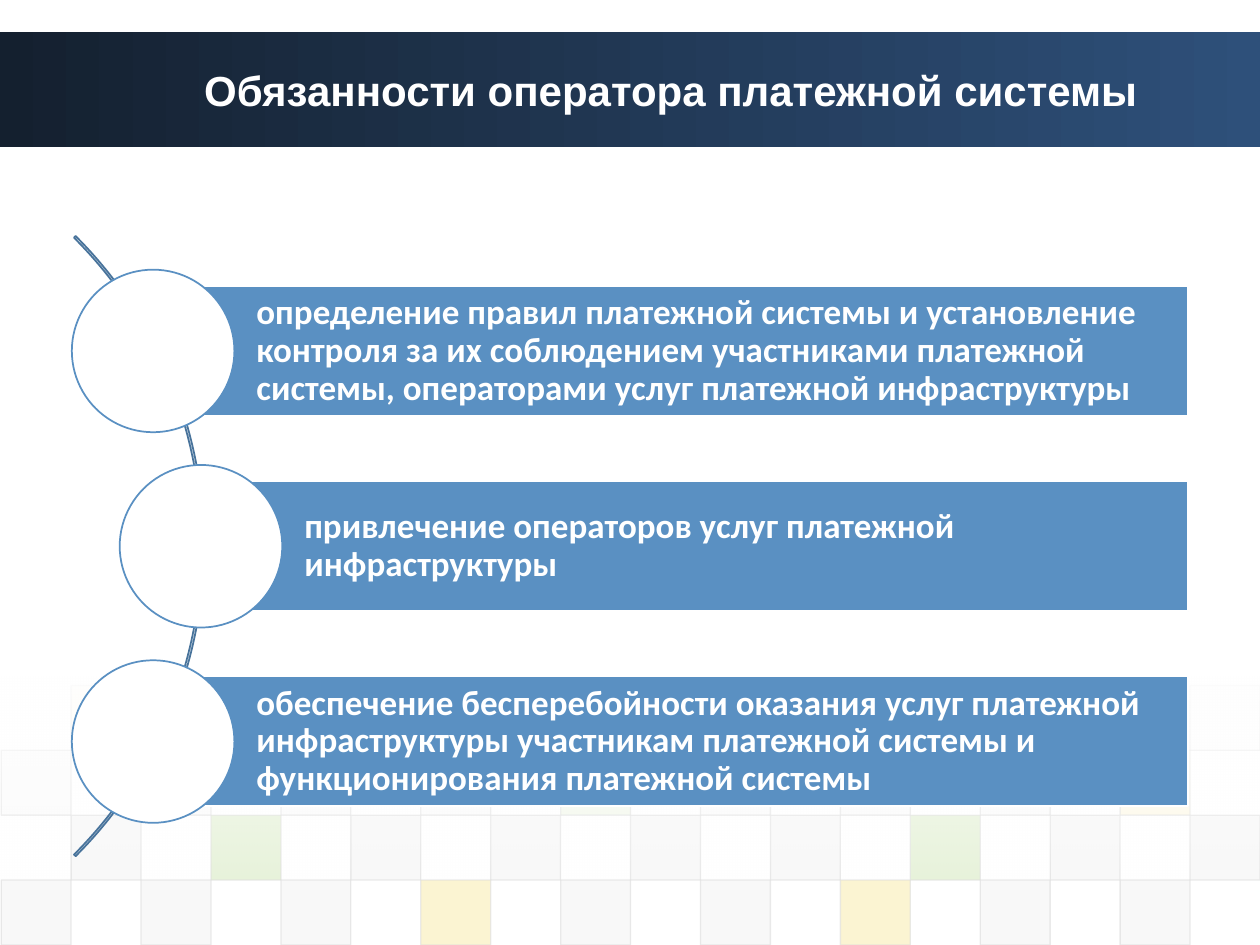
import pptx
import pptx.util
import pptx.dml.color
import pptx.enum.shapes
import pptx.enum.text
import pptx.oxml.ns
from lxml import etree

Inches = pptx.util.Inches
Pt = pptx.util.Pt
Shape = pptx.enum.shapes.MSO_SHAPE
Align = pptx.enum.text.PP_ALIGN
Anchor = pptx.enum.text.MSO_ANCHOR
qn = pptx.oxml.ns.qn

WHITE, GRAY, GREEN, YELLOW = "FFFFFF", "DDDDDD", "8AC246", "EFC821"
BLUE, ARC_BLUE = "5A90C2", "48739B"

DUTIES = [
    "определение правил платежной системы и установление контроля за их "
    "соблюдением участниками платежной системы, операторами услуг "
    "платежной инфраструктуры",
    "привлечение операторов услуг платежной инфраструктуры",
    "обеспечение бесперебойности оказания услуг платежной инфраструктуры "
    "участникам платежной системы и функционирования платежной системы",
]

# Mosaic rows: opacity, columns, and the columns that are not gray
TILE_ROWS = [
    (5, (1, 17), {1: YELLOW, 17: "EAEAEA"}),
    (10, range(0, 17, 2), {8: GREEN, 16: YELLOW}),
    (20, range(1, 18, 2), {3: GREEN, 13: GREEN}),
    (20, range(0, 17, 2), {6: YELLOW, 12: YELLOW}),
]


def set_color(color, value, opacity=100):
    color.rgb = pptx.dml.color.RGBColor.from_string(value)


def set_opacity(element, percents):
    """Give the colours inside an element their opacities, in order."""
    for color, percent in zip(element.iter(qn("a:srgbClr")), percents):
        etree.SubElement(color, qn("a:alpha"), val=str(percent * 1000))


def add_shape(page, kind, left, top, width, height, fill=None, line=None, weight=1):
    shape = page.shapes.add_shape(
        kind, Inches(left), Inches(top), Inches(width), Inches(height))
    shape.shadow.inherit = False
    if fill:
        shape.fill.solid()
        set_color(shape.fill.fore_color, fill)
    else:
        shape.fill.background()
    if line:
        set_color(shape.line.color, line)
        shape.line.width = Pt(weight)
    else:
        shape.line.fill.background()
    return shape


def set_gradient(shape, colors, angle):
    shape.fill.gradient()
    shape.fill.gradient_angle = angle
    for position, (stop, color) in enumerate(zip(shape.fill.gradient_stops, colors)):
        stop.position = position
        set_color(stop.color, color)


def write_text(frame, text, size, font, align, insets, spacing=1.0):
    frame.word_wrap = True
    frame.auto_size = pptx.enum.text.MSO_AUTO_SIZE.NONE
    frame.vertical_anchor = Anchor.MIDDLE
    (frame.margin_left, frame.margin_top,
     frame.margin_right, frame.margin_bottom) = map(Inches, insets)
    para = frame.paragraphs[0]
    para.alignment = align
    para.line_spacing = spacing
    span = para.add_run()
    span.text = text
    span.font.size = Pt(size)
    span.font.name = font
    span.font.bold = True
    set_color(span.font.color, WHITE)


def add_mosaic(page, left, top, width, height):
    pitch, row_height = 0.555, height / len(TILE_ROWS)
    for row, (opacity, columns, accents) in enumerate(TILE_ROWS):
        for column in columns:
            tile = add_shape(
                page, Shape.RECTANGLE, left + column * pitch, top + row * row_height,
                pitch, row_height, accents.get(column, GRAY), GRAY, 0.75)
            set_opacity(tile.element.spPr, (opacity, 60))
    # White veil that fades out downwards
    veil = add_shape(page, Shape.RECTANGLE, 0, top - 0.07, width, 1.62)
    set_gradient(veil, (WHITE, WHITE), 270)
    set_opacity(veil.element.spPr, (90, 0))


def add_header(page, left, top, width, height):
    band = add_shape(page, Shape.RECTANGLE, left, top, width, height)
    set_gradient(band, ("14202F", "2E507A"), 0)
    title = page.shapes.title
    title.left, title.top = Inches(left + 1.33), Inches(top)
    title.width, title.height = Inches(8.08), Inches(height)
    write_text(title.text_frame, "Обязанности оператора платежной системы ",
               24, "Arial", Align.CENTER, (0.1, 0.05, 0.1, 0.05))
    # Bring the title in front of the band
    page.shapes.element.append(title.element)


def add_duties(page, left, top, width, height):
    right, middle = left + width, top + height / 2
    bar_height, circle, pitch = 1.03, 1.29, 1.55
    # Arc on which the circles sit
    arc_size = 6.96
    arc = add_shape(page, Shape.BLOCK_ARC, left - 5.91, middle - arc_size / 2,
                    arc_size, arc_size, line=ARC_BLUE)
    for index, value in enumerate((189, 27, 0.0026)):
        arc.adjustments[index] = value
    # Bars with their circles, the middle one shifted along the arc
    for index, duty in enumerate(DUTIES):
        center_y = middle + (index - 1) * pitch
        circle_left = left + (0.38 if index == 1 else 0)
        bar_left = circle_left + circle / 2
        bar = add_shape(page, Shape.RECTANGLE, bar_left, center_y - bar_height / 2,
                        right - bar_left, bar_height, BLUE, WHITE)
        write_text(bar.text_frame, duty, 20, "Calibri", Align.LEFT,
                   (0.82, 0.06, 0.06, 0.06), 0.9)
        add_shape(page, Shape.OVAL, circle_left, center_y - circle / 2,
                  circle, circle, WHITE, BLUE)


def main():
    deck = pptx.Presentation()
    deck.slide_width, deck.slide_height = Inches(10), Inches(7.5)
    page = deck.slides.add_slide(deck.slide_layouts[5])
    add_mosaic(page, 0.01, 5.44, 10, 2.06)
    add_header(page, 0, 0.25, 10, 0.92)
    add_duties(page, 0.57, 2.14, 8.86, 4.39)
    deck.save("out.pptx")


if __name__ == "__main__":
    main()
